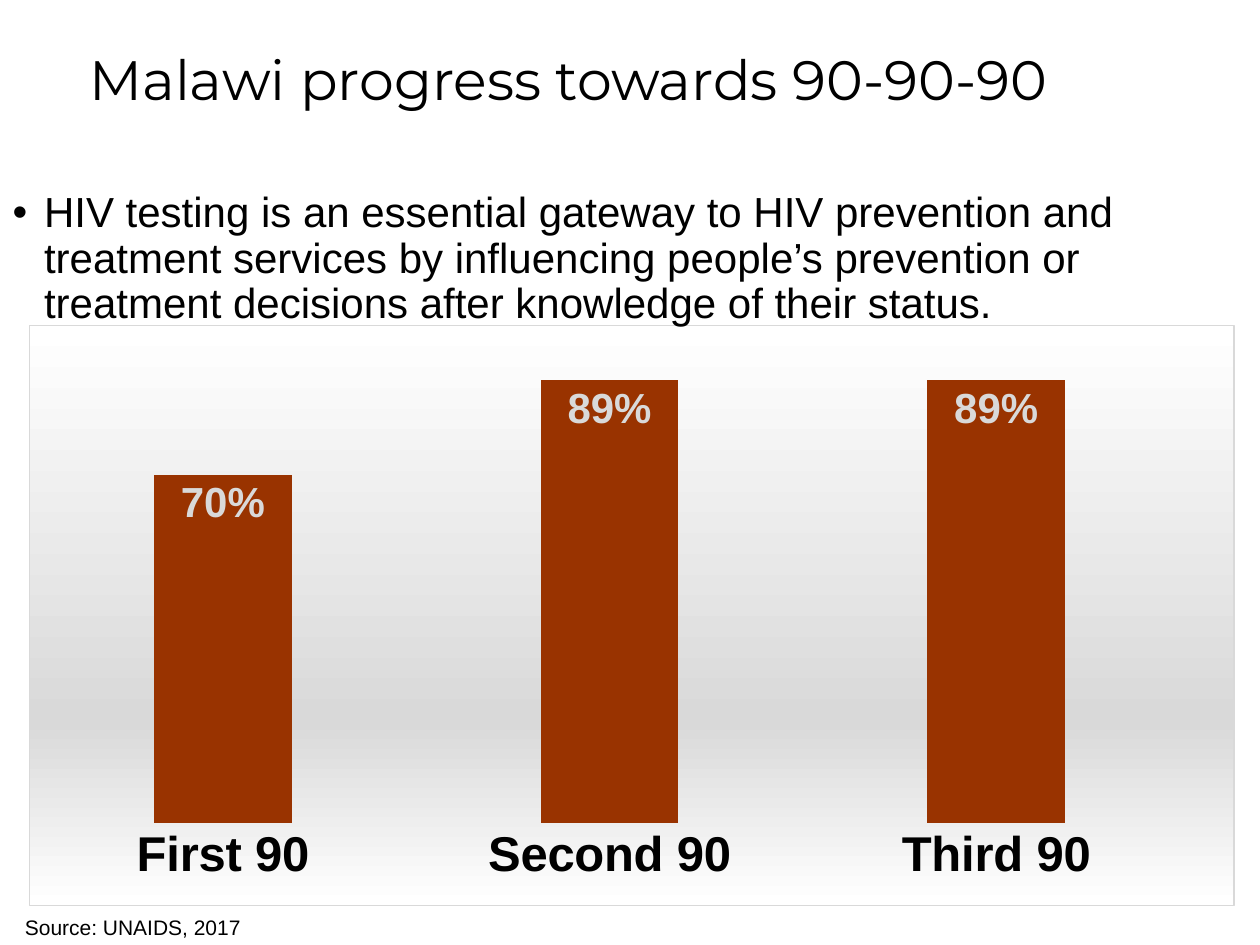
from lxml.etree import fromstring
from pptx import Presentation
from pptx.chart.data import CategoryChartData
from pptx.dml.color import RGBColor
from pptx.enum.chart import XL_CHART_TYPE, XL_LABEL_POSITION, XL_TICK_LABEL_POSITION, XL_TICK_MARK
from pptx.enum.text import MSO_ANCHOR, MSO_AUTO_SIZE, PP_ALIGN
from pptx.oxml.ns import nsdecls
from pptx.util import Inches, Pt

# Content
TITLE = "Malawi progress towards 90-90-90"
BODY = ("HIV testing is an essential gateway to HIV prevention and treatment services "
        "by influencing people’s prevention or treatment decisions after knowledge of their status.")
SOURCE = "Source: UNAIDS, 2017"
PROGRESS = {"First 90": 0.70, "Second 90": 0.89, "Third 90": 0.89}

COLORS = {"text": "000000", "bar": "993300", "grey": "D9D9D9", "white": "FFFFFF"}
GRADIENT = [(0, "white"), (68, "grey"), (100, "white")]

# Left, top, width, height in inches
BOXES = {
    "title": (0.61, 0.31, 8.58, 0.8),
    "body": (0, 1.47, 9.81, 0.95),
    "chart": (0.23, 2.58, 9.57, 4.61),
    "source": (0, 7.28, 2.11, 0.15),
}
PLOT = {"x": 0, "y": 0, "w": 0.963, "h": 0.859}  # shares of the chart


def box(name):
    return [Inches(v) for v in BOXES[name]]


def set_font(font, size, color="text", bold=False, name="Arial"):
    font.name, font.size, font.bold = name, Pt(size), bold
    font.color.rgb = RGBColor.from_string(COLORS[color])


def fill_text(sp, name, text, size, font="Arial", anchor=MSO_ANCHOR.TOP, align=PP_ALIGN.LEFT):
    sp.left, sp.top, sp.width, sp.height = box(name)
    tf = sp.text_frame
    tf.text = text
    tf.word_wrap = True
    tf.auto_size = MSO_AUTO_SIZE.NONE
    tf.vertical_anchor = anchor
    p = tf.paragraphs[0]
    p.alignment = align
    set_font(p.font, size, name=font)
    return p


prs = Presentation()
prs.slide_width, prs.slide_height = Inches(10), Inches(7.5)
s = prs.slides.add_slide(prs.slide_layouts[1])

# Chart, placed behind the text
data = CategoryChartData(number_format="0%")
data.categories = list(PROGRESS)
data.add_series("Series 1", list(PROGRESS.values()))
frame = s.shapes.add_chart(XL_CHART_TYPE.COLUMN_CLUSTERED, *box("chart"), data)
s.shapes.title.element.addprevious(frame.element)
chart = frame.chart
chart.has_title = chart.has_legend = False
set_font(chart.font, 10)

values = chart.value_axis
values.minimum_scale, values.maximum_scale = 0, 1
values.has_major_gridlines = False
values.visible = False

cats = chart.category_axis
cats.major_tick_mark = cats.minor_tick_mark = XL_TICK_MARK.NONE
cats.tick_label_position = XL_TICK_LABEL_POSITION.NEXT_TO_AXIS
cats.format.line.fill.background()
set_font(cats.tick_labels.font, 28, bold=True)

plot = chart.plots[0]
plot.gap_width = 181
plot.vary_by_categories = False
bars = plot.series[0]
bars.format.fill.solid()
bars.format.fill.fore_color.rgb = RGBColor.from_string(COLORS["bar"])
labels = bars.data_labels
labels.show_value = True
labels.position = XL_LABEL_POSITION.INSIDE_END
labels.number_format, labels.number_format_is_linked = "0%", False
set_font(labels.font, 24, "grey", bold=True)

# Gradient background, border and fixed plot area
stops = "".join(f'<a:gs pos="{pos * 1000}"><a:srgbClr val="{COLORS[c]}"/></a:gs>' for pos, c in GRADIENT)
chart_xml = chart.element.chart
chart_xml.addnext(fromstring(
    f'<c:spPr {nsdecls("c", "a")}><a:gradFill><a:gsLst>{stops}</a:gsLst><a:lin ang="5400000"/></a:gradFill>'
    f'<a:ln w="{Pt(0.75)}"><a:solidFill><a:srgbClr val="{COLORS["grey"]}"/></a:solidFill></a:ln></c:spPr>'))
modes = '<c:xMode val="edge"/><c:yMode val="edge"/>'
sizes = "".join(f'<c:{k} val="{v}"/>' for k, v in PLOT.items())
plot_area = chart_xml.plotArea
for old in plot_area.xpath("c:layout"):
    plot_area.remove(old)
plot_area.insert(0, fromstring(
    f'<c:layout {nsdecls("c")}><c:manualLayout><c:layoutTarget val="inner"/>{modes}{sizes}'
    '</c:manualLayout></c:layout>'))

# Title, source and bulleted text
fill_text(s.shapes.title, "title", TITLE, 31.7, font="Montserrat")
fill_text(s.shapes.add_textbox(*box("source")), "source", SOURCE, 12,
          anchor=MSO_ANCHOR.MIDDLE, align=PP_ALIGN.CENTER)
p = fill_text(s.placeholders[1], "body", BODY, 24)
p.line_spacing, p.space_before = 0.9, Pt(10)
pPr = p._p.get_or_add_pPr()
pPr.set("marL", str(Inches(0.25)))
pPr.set("indent", str(Inches(-0.25)))

prs.save("out.pptx")
